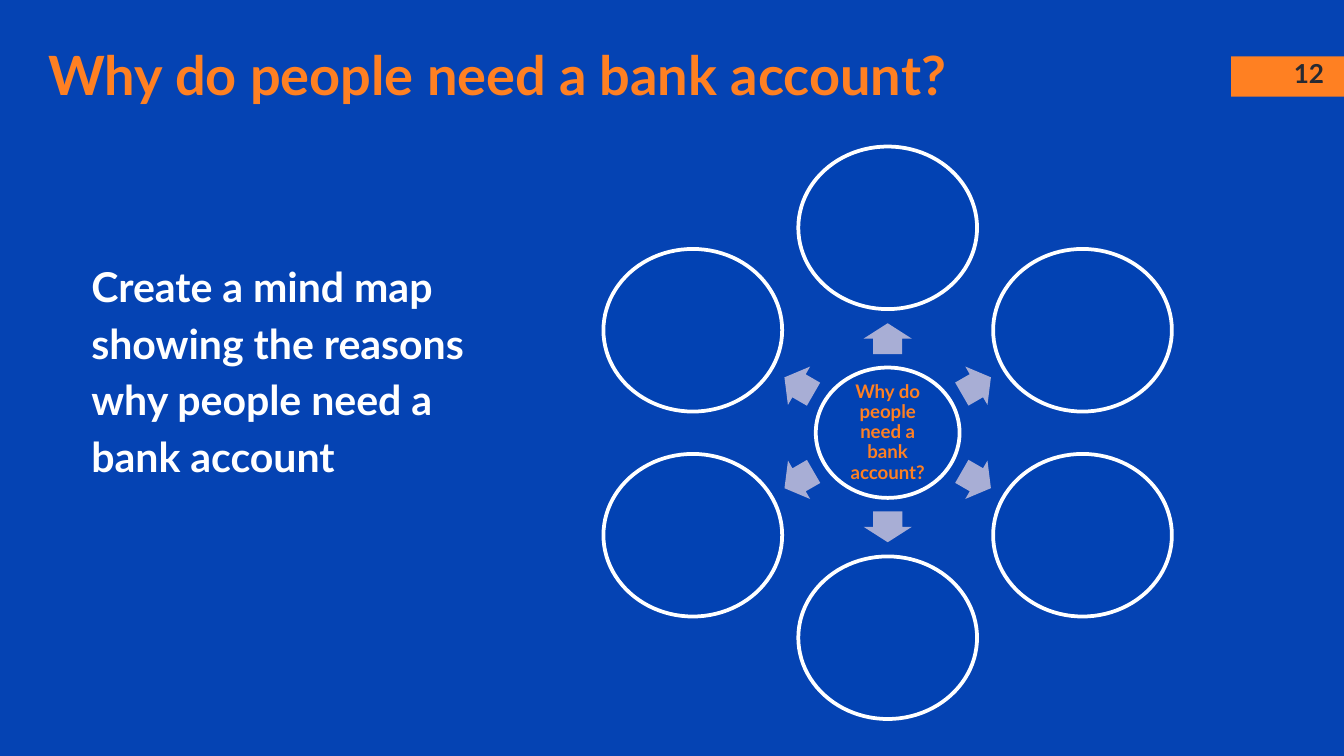
import dataclasses
import math

import pptx
import pptx.dml.color
import pptx.enum.shapes
import pptx.enum.text
import pptx.oxml
import pptx.oxml.ns
import pptx.presentation
import pptx.shapes.autoshape
import pptx.slide
import pptx.text.text
import pptx.util

BLUE = pptx.dml.color.RGBColor(0x05, 0x43, 0xB3)
BUBBLE_BLUE = pptx.dml.color.RGBColor(0x02, 0x42, 0xB3)
ORANGE = pptx.dml.color.RGBColor(0xFF, 0x80, 0x22)
LILAC = pptx.dml.color.RGBColor(0xA8, 0xAE, 0xD5)
WHITE = pptx.dml.color.RGBColor(0xFF, 0xFF, 0xFF)
DARK = pptx.dml.color.RGBColor(0x26, 0x2A, 0x33)

# The slide is a grid of square cells, a tenth of an inch each.
CELL = pptx.util.Inches(0.1)
COLUMNS, ROWS = 100, 56.25

SHAPES = pptx.enum.shapes.MSO_SHAPE
ALIGN = pptx.enum.text.PP_ALIGN
ANCHOR = pptx.enum.text.MSO_ANCHOR
QUESTION = "Why do people need a bank account?"


@dataclasses.dataclass(frozen=True)
class Area:
    """Left, top, width and height in grid cells."""
    column: float
    row: float
    columns: float
    rows: float

    def emu(self) -> dict[str, int]:
        return {
            "left": round(self.column * CELL),
            "top": round(self.row * CELL),
            "width": round(self.columns * CELL),
            "height": round(self.rows * CELL),
        }


@dataclasses.dataclass(frozen=True)
class Ring:
    """An ellipse around the middle of the mind map, in grid cells."""
    radius_x: float
    radius_y: float
    center_x: float = 66.05
    center_y: float = 32.2

    def area(self, degrees: float, columns: float, rows: float) -> Area:
        """Area of the given size centred on the ring at an angle."""
        angle = math.radians(degrees)
        x = self.center_x + self.radius_x * math.cos(angle)
        y = self.center_y + self.radius_y * math.sin(angle)
        return Area(x - columns / 2, y - rows / 2, columns, rows)


@dataclasses.dataclass(frozen=True)
class TextStyle:
    size: float
    color: pptx.dml.color.RGBColor
    align: ALIGN = ALIGN.LEFT
    anchor: ANCHOR = ANCHOR.MIDDLE
    line_spacing: float = 1.0
    inset: float = 1.0


HUB = Ring(0, 0)
BUBBLE_RING = Ring(16.74, 15.25)
ARROW_RING = Ring(7.62, 7.0)
BRANCH_ANGLES = range(-90, 270, 60)

TITLE_STYLE = TextStyle(29, ORANGE)
TASK_STYLE = TextStyle(22, WHITE, anchor=ANCHOR.TOP, line_spacing=1.15)
HUB_STYLE = TextStyle(10, ORANGE, ALIGN.CENTER, line_spacing=0.9, inset=0.1)
NUMBER_STYLE = TextStyle(14, DARK, ALIGN.CENTER)


def apply(target: object, values: dict[str, object]) -> None:
    for attribute, value in values.items():
        setattr(target, attribute, value)


def write(frame: pptx.text.text.TextFrame, lines: list[str], style: TextStyle) -> None:
    inset = round(style.inset * CELL)
    frame.text = "\n".join(lines)
    apply(frame, {
        "auto_size": pptx.enum.text.MSO_AUTO_SIZE.NONE,
        "word_wrap": True,
        "vertical_anchor": style.anchor,
        "margin_left": inset, "margin_right": inset,
        "margin_top": inset, "margin_bottom": inset,
    })
    for paragraph in frame.paragraphs:
        properties = paragraph._p.get_or_add_pPr()
        properties.set("marL", "0")
        properties.set("indent", "0")
        properties.append(pptx.oxml.parse_xml(
            f"<a:buNone {pptx.oxml.ns.nsdecls('a')}/>"))
        apply(paragraph, {
            "alignment": style.align,
            "line_spacing": style.line_spacing,
            "space_before": pptx.util.Pt(0),
        })
        for run in paragraph.runs:
            apply(run.font, {"name": "Lato", "bold": True,
                             "size": pptx.util.Pt(style.size)})
            run.font.color.rgb = style.color


def add_filled(slide: pptx.slide.Slide, preset: SHAPES, area: Area,
               fill: pptx.dml.color.RGBColor) -> pptx.shapes.autoshape.Shape:
    shape = slide.shapes.add_shape(preset, **area.emu())
    shape.shadow.inherit = False
    shape.fill.solid()
    shape.fill.fore_color.rgb = fill
    shape.line.fill.background()
    return shape


def add_bubble(slide: pptx.slide.Slide, area: Area) -> pptx.shapes.autoshape.Shape:
    bubble = add_filled(slide, SHAPES.OVAL, area, BUBBLE_BLUE)
    bubble.line.color.rgb = WHITE
    bubble.line.width = pptx.util.Pt(2)
    return bubble


def add_arrow(slide: pptx.slide.Slide, degrees: int) -> None:
    """Add an arrow that points outwards from the hub."""
    vertical = degrees % 180 == 90
    length, thickness = (2.3, 3.6) if vertical else (2.5, 3.3)
    area = ARROW_RING.area(degrees, length, thickness)
    arrow = add_filled(slide, SHAPES.RIGHT_ARROW, area, LILAC)
    arrow.adjustments[0] = 0.6
    arrow.adjustments[1] = 0.5
    arrow.rotation = degrees % 360


def add_mind_map(slide: pptx.slide.Slide) -> None:
    hub = add_bubble(slide, HUB.area(0, 10.7, 9.7))
    write(hub.text_frame, [QUESTION], HUB_STYLE)
    for degrees in BRANCH_ANGLES:
        add_arrow(slide, degrees)
        add_bubble(slide, BUBBLE_RING.area(degrees, 13.3, 12.1))


def add_page_number(slide: pptx.slide.Slide) -> None:
    add_filled(slide, SHAPES.RECTANGLE, Area(91.6, 4.2, 8.4, 3), ORANGE)
    number = slide.shapes.add_textbox(**Area(94.8, 4.2, 5.2, 2.5).emu())
    write(number.text_frame, ["12"], NUMBER_STYLE)


def build() -> pptx.presentation.Presentation:
    deck = pptx.Presentation()
    apply(deck, {"slide_width": COLUMNS * CELL, "slide_height": round(ROWS * CELL)})
    slide = deck.slides.add_slide(deck.slide_layouts[1])
    slide.background.fill.solid()
    slide.background.fill.fore_color.rgb = BLUE

    title, task = slide.placeholders
    apply(title, Area(2.6, 2.7, 84.6, 5.6).emu())
    write(title.text_frame, [QUESTION], TITLE_STYLE)
    apply(task, Area(5.8, 17.9, 35.9, 18.5).emu())
    write(task.text_frame,
          ["Create a mind map showing the reasons why people need a", "bank account"],
          TASK_STYLE)

    add_page_number(slide)
    add_mind_map(slide)
    return deck


if __name__ == "__main__":
    build().save("out.pptx")
